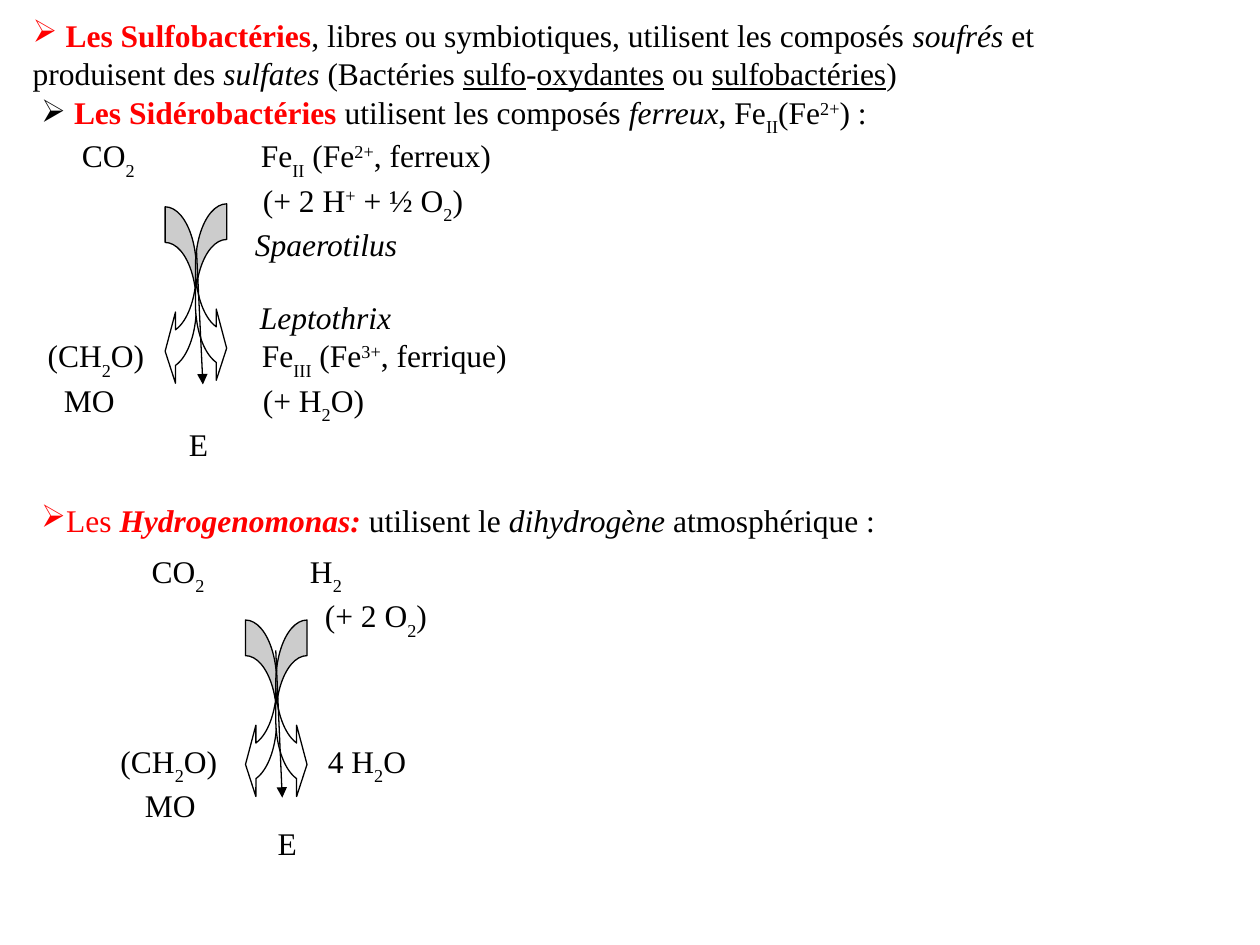
"""Build the slide on sulfur, iron and hydrogen bacteria."""
import pptx
import pptx.dml.color
import pptx.enum.shapes
import pptx.oxml
import pptx.oxml.ns
import pptx.util
from pptx.util import Cm

FONT, SIZE = "Times New Roman", 18
BLACK, WHITE, RED = "000000", "FFFFFF", "FF0000"
INSET = 0.25
BASELINES = {"sub": "-30000", "sup": "30000"}

HEADINGS = [
    ((0.41, 0.2, 23.22, 1.8), [
        (" Les Sulfobactéries", "red bold"),
        ", libres ou symbiotiques, utilisent les composés ",
        ("soufrés", "italic"), " et produisent des ", ("sulfates", "italic"),
        " (Bactéries ", ("sulfo", "underline"), "-", ("oxydantes", "underline"),
        " ou ", ("sulfobactéries", "underline"), ")"]),
    ((0.58, 1.75, 18.47, 1.2), [
        " ", ("Les Sidérobactéries ", "red bold"), "utilisent les composés ",
        ("ferreux", "italic"), ", Fe", ("II", "sub"), "(Fe", ("2+", "sup"), ") :"]),
    ((0.58, 9.98, 20.65, 1.0), [
        ("Les ", "red"), ("Hydrogenomonas:", "red bold italic"), " utilisent le ",
        ("dihydrogène", "italic"), " atmosphérique :"]),
]

CO2 = ["CO", ("2", "sub")]
CH2O = ["(CH", ("2", "sub"), "O)"]

REACTIONS = [
    ((0.58, 2.62, 14, 3.2), [
        [(1.65, CO2), (5.26, ["Fe", ("II", "sub"), " (Fe", ("2+", "sup"), ", ferreux)"])],
        [(5.3, ["(+ 2 H", ("+", "sup"), " + ½ O", ("2", "sub"), ")"])],
        [(5.14, [("Spaerotilus", "italic")])]]),
    ((0.71, 5.89, 12, 3.9), [
        [(5.24, [("Leptothrix", "italic")])],
        [(0.96, CH2O), (5.28, ["Fe", ("III", "sub"), " (Fe", ("3+", "sup"), ", ferrique)"])],
        [(1.29, ["MO"]), (5.3, ["(+ H", ("2", "sub"), "O)"])],
        [(3.81, ["E"])]]),
    ((2.18, 11.0, 9, 2.5), [
        [(3.06, CO2), (6.25, ["H", ("2", "sub")])],
        [(6.55, ["(+ 2 O", ("2", "sub"), ")"])]]),
    ((2.18, 14.83, 12, 3.3), [
        [(2.43, CH2O), (6.61, ["4 H", ("2", "sub"), "O"])],
        [(2.92, ["MO"])],
        [(5.6, ["E"])]]),
]

CURVE_SIZE = (0.63, 3.63)
CURVE_ADJUSTMENTS = (1.14, 2.281, 0.333)
LEFT_CURVE = pptx.enum.shapes.MSO_SHAPE.CURVED_LEFT_ARROW
RIGHT_CURVE = pptx.enum.shapes.MSO_SHAPE.CURVED_RIGHT_ARROW
COUPLINGS = [
    {"carbon": (3.33, 4.17), "donor": (3.94, 4.11), "energy": (3.96, 5.03, 4.09, 7.75)},
    {"carbon": (4.95, 12.5), "donor": (5.56, 12.5), "energy": (5.56, 13.11, 5.69, 16.08)},
]


def rgb(value):
    return pptx.dml.color.RGBColor.from_string(value)


def add_xml(parent, tag, attributes=""):
    namespace = pptx.oxml.ns.nsdecls("a")
    child = pptx.oxml.parse_xml(f"<a:{tag} {namespace} {attributes}/>")
    parent.append(child)
    return child


def write_runs(paragraph, pieces):
    for piece in pieces:
        words, style = (piece, "") if isinstance(piece, str) else piece
        run = paragraph.add_run()
        run.text = words
        run.font.name = FONT
        run.font.size = pptx.util.Pt(SIZE)
        run.font.color.rgb = rgb(RED if "red" in style else BLACK)
        run.font.bold = "bold" in style
        run.font.italic = "italic" in style
        run.font.underline = "underline" in style
        if style in BASELINES:
            run.font._element.set("baseline", BASELINES[style])


def add_frame(slide, area):
    frame = slide.shapes.add_textbox(*map(Cm, area)).text_frame
    frame.word_wrap = True
    return frame


def add_heading(slide, area, pieces):
    paragraph = add_frame(slide, area).paragraphs[0]
    properties = paragraph._p.get_or_add_pPr()
    properties.set("marL", "0")
    properties.set("indent", "0")
    add_xml(properties, "buChar", 'char="➢"')
    write_runs(paragraph, pieces)


def add_reaction(slide, area, rows):
    frame = add_frame(slide, area)
    edge = area[0] + INSET
    for index, row in enumerate(rows):
        paragraph = frame.add_paragraph() if index else frame.paragraphs[0]
        stops = add_xml(paragraph._p.get_or_add_pPr(), "tabLst")
        for column, pieces in row:
            if column > edge:
                add_xml(stops, "tab", f'pos="{Cm(column - edge)}" algn="l"')
                write_runs(paragraph, ["\t"])
            write_runs(paragraph, pieces)


def add_curve(slide, preset, corner):
    curve = slide.shapes.add_shape(preset, *map(Cm, corner + CURVE_SIZE))
    for index, value in enumerate(CURVE_ADJUSTMENTS):
        curve.adjustments[index] = value
    curve.shadow.inherit = False
    curve.fill.solid()
    curve.fill.fore_color.rgb = rgb(WHITE)
    outline(curve.line)


def outline(line):
    line.color.rgb = rgb(BLACK)
    line.width = pptx.util.Pt(0.75)


def add_energy_arrow(slide, ends):
    straight = pptx.enum.shapes.MSO_CONNECTOR.STRAIGHT
    arrow = slide.shapes.add_connector(straight, *map(Cm, ends))
    outline(arrow.line)
    add_xml(arrow.line._get_or_add_ln(), "tailEnd", 'type="triangle"')
    add_xml(arrow._element.spPr, "effectLst")


def main():
    deck = pptx.Presentation()
    deck.slide_width, deck.slide_height = Cm(25.4), Cm(19.05)
    slide = deck.slides.add_slide(deck.slide_layouts[6])
    for coupling in COUPLINGS:
        add_curve(slide, LEFT_CURVE, coupling["carbon"])
        add_curve(slide, RIGHT_CURVE, coupling["donor"])
        add_energy_arrow(slide, coupling["energy"])
    for area, pieces in HEADINGS:
        add_heading(slide, area, pieces)
    for area, rows in REACTIONS:
        add_reaction(slide, area, rows)
    deck.save("out.pptx")


if __name__ == "__main__":
    main()
